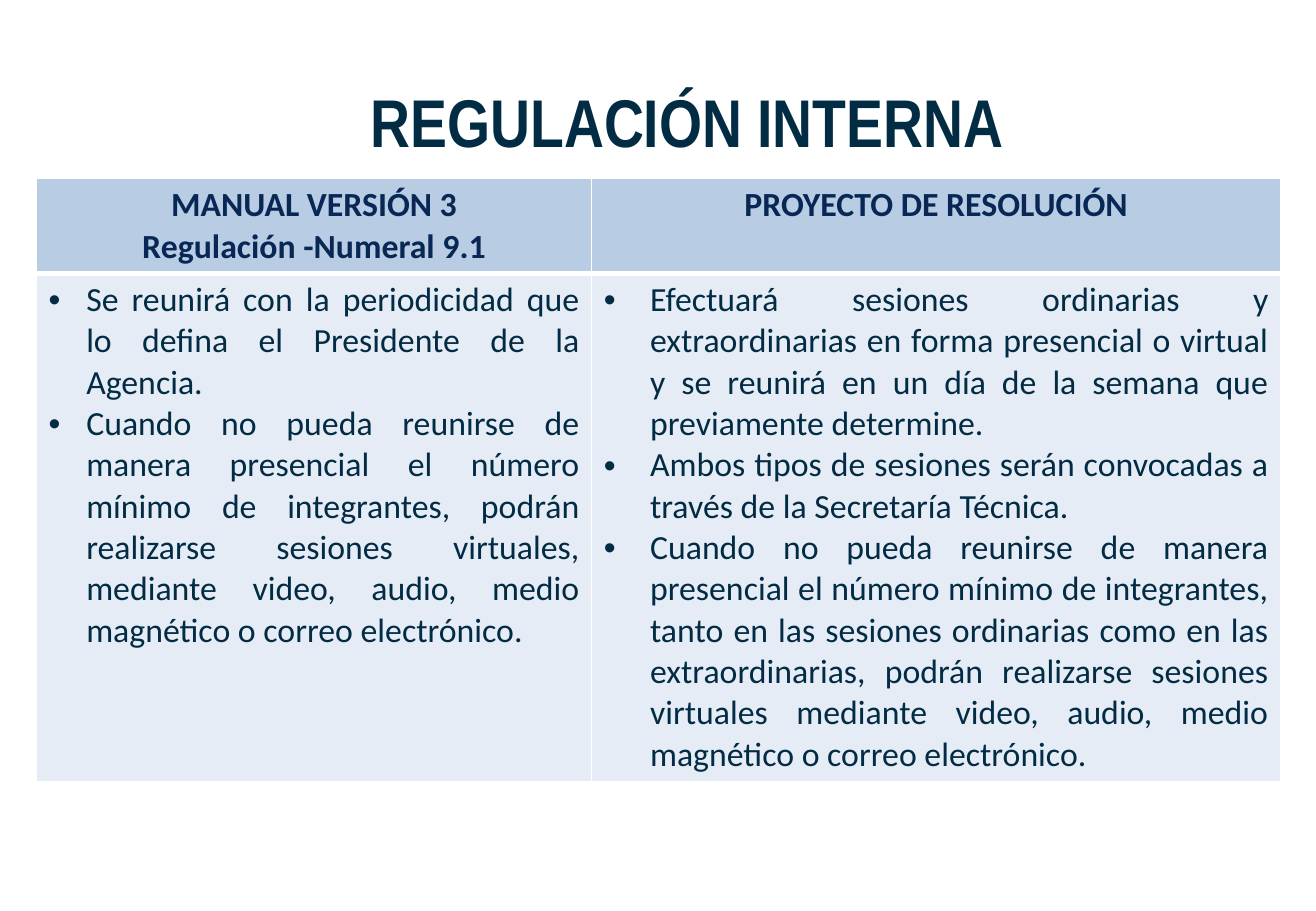
from lxml import etree
from pptx import Presentation
from pptx import util as u
from pptx.dml.color import RGBColor
from pptx.enum import text
from pptx.oxml import ns

HEADERS = [
    ["MANUAL VERSIÓN 3", "Regulación -Numeral 9.1"],
    ["PROYECTO DE RESOLUCIÓN"],
]
RULES = [
    [
        "Se reunirá con la periodicidad que lo defina el Presidente de la Agencia. ",
        "Cuando no pueda reunirse de manera presencial el número mínimo de integrantes, "
        "podrán realizarse sesiones virtuales, mediante video, audio, medio magnético "
        "o correo electrónico. ",
    ],
    [
        "Efectuará sesiones ordinarias y extraordinarias en forma presencial o virtual "
        "y se reunirá en un día de la semana que previamente determine. ",
        "Ambos tipos de sesiones serán convocadas a través de la Secretaría Técnica. ",
        "Cuando no pueda reunirse de manera presencial el número mínimo de integrantes, "
        "tanto en las sesiones ordinarias como en las extraordinarias, podrán realizarse "
        "sesiones virtuales mediante video, audio, medio magnético o correo electrónico. ",
    ],
]
INDENTS = [0.31, 0.38]
COLUMN_WIDTHS = [4.57, 5.67]
ROW_HEIGHTS = [0.77, 4.17]


def color(value):
    return RGBColor.from_string(value)


class SlideBuilder:
    title_font, body_font = "Arial Narrow", "Calibri"
    text_color, header_color = "022B44", "082754"
    header_fill, body_fill, border_color = "B8CCE4", "E6ECF5", "FFFFFF"

    def __init__(self, presentation):
        self.slide = presentation.slides.add_slide(presentation.slide_layouts[5])

    def add_text(self, paragraph, content, font, size, hex_color, bold, align):
        paragraph.alignment = align
        run = paragraph.add_run()
        run.text = content
        run.font.name = font
        run.font.size = u.Pt(size)
        run.font.bold = bold
        run.font.color.rgb = color(hex_color)

    def title(self, content, left, top, width, height):
        shape = self.slide.shapes.title
        shape.left, shape.top = u.Inches(left), u.Inches(top)
        shape.width, shape.height = u.Inches(width), u.Inches(height)
        frame = shape.text_frame
        frame.auto_size = text.MSO_AUTO_SIZE.NONE
        frame.vertical_anchor = text.MSO_ANCHOR.MIDDLE
        self.add_text(frame.paragraphs[0], content, self.title_font, 40,
                      self.text_color, True, text.PP_ALIGN.CENTER)

    def bullet(self, paragraph, indent):
        properties = paragraph._p.get_or_add_pPr()
        properties.set("marL", str(u.Inches(indent)))
        properties.set("indent", str(u.Inches(-indent)))
        etree.SubElement(properties, ns.qn("a:buFont"), typeface="Arial")
        etree.SubElement(properties, ns.qn("a:buChar"), char="•")

    def borders(self, cell, top, bottom):
        """Draw the four cell edges; top and bottom are widths in points."""
        properties = cell._tc.get_or_add_tcPr()
        edges = {"lnL": 1, "lnR": 1, "lnT": top, "lnB": bottom}
        for position, (edge, width) in enumerate(edges.items()):
            line = etree.Element(ns.qn(f"a:{edge}"), w=str(u.Pt(width)))
            fill = etree.SubElement(line, ns.qn("a:solidFill"))
            etree.SubElement(fill, ns.qn("a:srgbClr"), val=self.border_color)
            properties.insert(position, line)

    def cell(self, cell, lines, is_header, indent):
        cell.fill.solid()
        cell.fill.fore_color.rgb = color(self.header_fill if is_header else self.body_fill)
        self.borders(cell, *((1, 3) if is_header else (3, 1)))
        align = text.PP_ALIGN.CENTER if is_header else text.PP_ALIGN.JUSTIFY
        hex_color = self.header_color if is_header else self.text_color
        frame = cell.text_frame
        for index, content in enumerate(lines):
            paragraph = frame.add_paragraph() if index else frame.paragraphs[0]
            if not is_header:
                self.bullet(paragraph, indent)
            self.add_text(paragraph, content, self.body_font, 20, hex_color, is_header, align)

    def table(self, rows, left, top):
        table = self.slide.shapes.add_table(
            len(rows), len(COLUMN_WIDTHS), u.Inches(left), u.Inches(top),
            u.Inches(sum(COLUMN_WIDTHS)), u.Inches(sum(ROW_HEIGHTS))).table
        for column, width in zip(table.columns, COLUMN_WIDTHS):
            column.width = u.Inches(width)
        for row, height in zip(table.rows, ROW_HEIGHTS):
            row.height = u.Inches(height)
        for r, row in enumerate(rows):
            for c, lines in enumerate(row):
                self.cell(table.cell(r, c), lines, r == 0, INDENTS[c])


def main():
    presentation = Presentation()
    presentation.slide_width = u.Inches(10.83)
    presentation.slide_height = u.Inches(7.5)
    builder = SlideBuilder(presentation)
    builder.title("REGULACIÓN INTERNA", 1.05, 0.68, 9.21, 0.63)
    builder.table([HEADERS, RULES], 0.3, 1.47)
    presentation.save("out.pptx")


if __name__ == "__main__":
    main()
